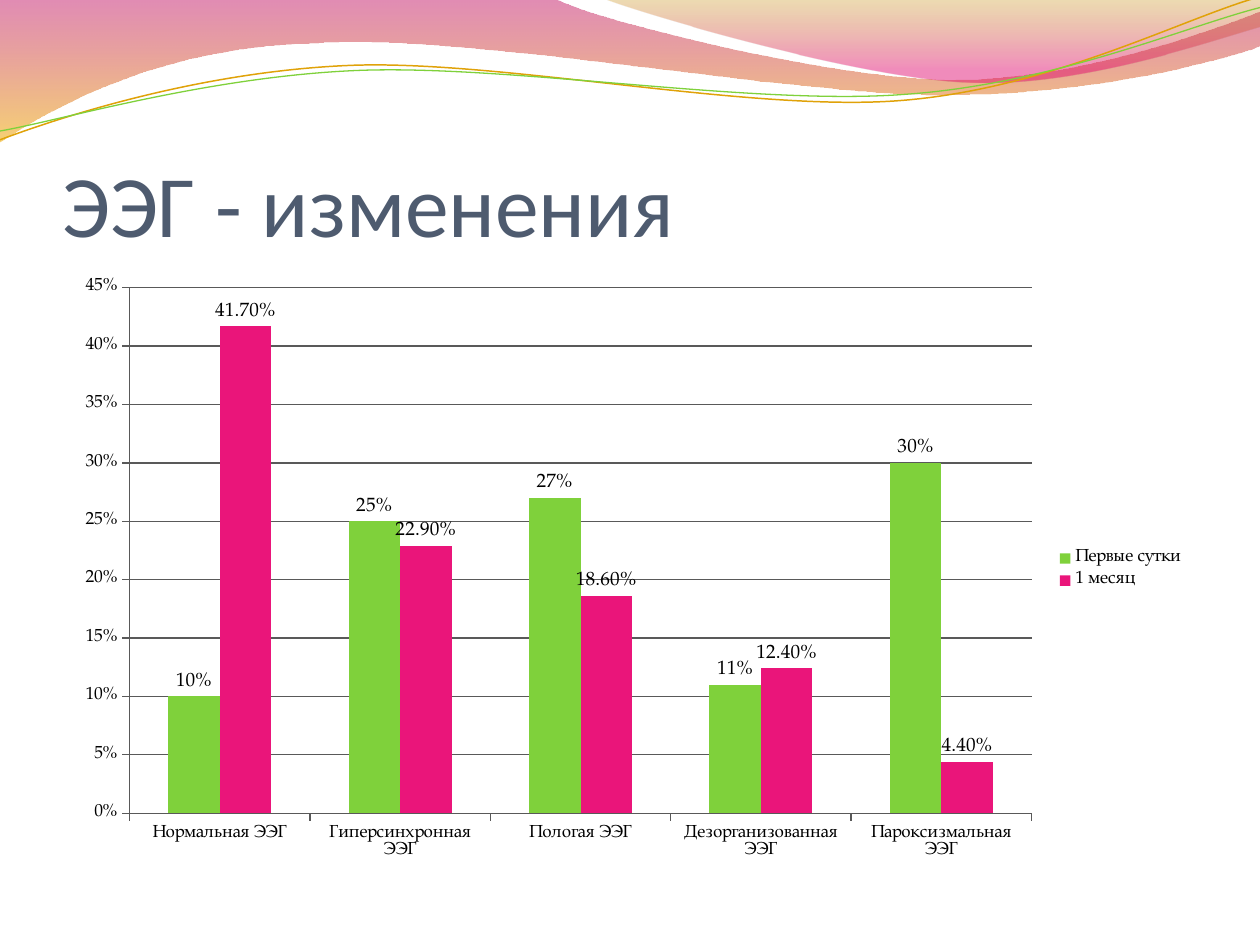
import pptx
import pptx.chart.data
import pptx.dml.color
import pptx.enum.chart
import pptx.enum.text
import pptx.oxml
import pptx.oxml.ns
import pptx.util
from pptx.util import Inches

theme = {
    "title_font": "Calibri", "title_size": 50, "title_color": "4E5B6F",
    "chart_font": "TeX Gyre Pagella", "chart_size": 10, "label_size": 11,
    "text": "000000", "axis": "595959",
    "first_day": "7FD13B", "one_month": "EA157A",
    "wave_gradient": [(0, "BD0059", 45), (1, "F0AB00", 55)],
    "corner_gradient": [(0, "C38B00", 30), (0.8, "E1006B", 45)],
    "gold_line": "E0A209", "green_line": "7FD13B",
}


def rgb(name):
    return pptx.dml.color.RGBColor.from_string(theme.get(name, name))


def draw_curve(shapes, start, segments, closed):
    builder = shapes.build_freeform(Inches(start[0]), Inches(start[1]), scale=1.0)
    for segment in segments:
        points = zip(segment[::2], segment[1::2])
        builder.add_line_segments([(Inches(x), Inches(y)) for x, y in points], close=False)
    if closed:
        builder.add_line_segments([], close=True)
    shape = builder.convert_to_shape()
    shape.shadow.inherit = False
    lines = iter(list(shape._element.iter(pptx.oxml.ns.qn("a:lnTo"))))
    for segment in segments:
        first = next(lines)
        if len(segment) == 6:
            first.tag = pptx.oxml.ns.qn("a:cubicBezTo")
            for line in (next(lines), next(lines)):
                first.append(line[0])
                line.getparent().remove(line)
    return shape


presentation = pptx.Presentation()
presentation.slide_width = Inches(10)
presentation.slide_height = Inches(7.5)
slide = presentation.slides.add_slide(presentation.slide_layouts[6])

bands = [
    ("wave_gradient", (0, 0), [
        (4.4, -0.01),
        (4.76, 0.17, 6.64, 0.63, 7.58, 0.63),
        (8.53, 0.63, 9.58, 0.26, 10, 0.09),
        (10.01, 0.36),
        (9.83, 0.44, 8.7, 0.76, 7.46, 0.75),
        (6.22, 0.75, 3.82, 0.28, 2.57, 0.34),
        (1.29, 0.36, 0.46, 0.83, -0.01, 1.13),
    ]),
    ("corner_gradient", (4.79, -0.01), [
        (5.09, 0.11, 6.82, 0.62, 7.69, 0.65),
        (8.56, 0.69, 9.61, 0.32, 10, 0.21),
        (10, 0),
    ]),
]
for gradient, start, segments in bands:
    band = draw_curve(slide.shapes, start, segments, True)
    band.line.fill.background()
    band.fill.gradient()
    band.fill.gradient_angle = 270
    for stop, (position, color, opacity) in zip(band.fill.gradient_stops, theme[gradient]):
        stop.position = position
        stop.color.rgb = rgb(color)
    colors = band._element.spPr.iter(pptx.oxml.ns.qn("a:srgbClr"))
    for color_element, (position, color, opacity) in zip(colors, theme[gradient]):
        alpha = pptx.oxml.parse_xml(
            f'<a:alpha {pptx.oxml.ns.nsdecls("a")} val="{opacity * 1000}"/>')
        color_element.append(alpha)

ribbons = [
    ("gold_line", 0.85, (0, 1.11), [
        (0.48, 0.93, 1.58, 0.57, 2.77, 0.52),
        (3.95, 0.47, 5.93, 0.89, 7.13, 0.8),
        (8.33, 0.71, 9.38, 0.15, 9.98, -0.02),
    ]),
    ("green_line", 0.75, (0, 1.04), [
        (0.47, 0.96, 1.64, 0.61, 2.83, 0.56),
        (4.03, 0.51, 5.97, 0.84, 7.17, 0.75),
        (8.36, 0.67, 9.41, 0.21, 10, 0.06),
    ]),
]
for color, width, start, segments in ribbons:
    ribbon = draw_curve(slide.shapes, start, segments, False)
    ribbon.fill.background()
    ribbon.line.color.rgb = rgb(color)
    ribbon.line.width = pptx.util.Pt(width)

title = slide.shapes.add_textbox(Inches(0.5), Inches(0.77), Inches(9), Inches(1.25))
text_frame = title.text_frame
text_frame.word_wrap = True
text_frame.vertical_anchor = pptx.enum.text.MSO_ANCHOR.BOTTOM
text_frame.margin_left = text_frame.margin_right = text_frame.margin_bottom = 0
text_frame.margin_top = Inches(0.05)
text_frame.text = "ЭЭГ - изменения"
title_font = text_frame.paragraphs[0].runs[0].font
title_font.name = theme["title_font"]
title_font.size = pptx.util.Pt(theme["title_size"])
title_font.color.rgb = rgb("title_color")

series_table = [
    ("Первые сутки", (0.1, 0.25, 0.27, 0.11, 0.3), "0%", "first_day"),
    ("1 месяц", (0.417, 0.229, 0.186, 0.124, 0.044), "0.00%", "one_month"),
]
chart_data = pptx.chart.data.CategoryChartData()
chart_data.categories = [
    "Нормальная ЭЭГ", "Гиперсинхронная ЭЭГ", "Пологая ЭЭГ",
    "Дезорганизованная ЭЭГ", "Пароксизмальная ЭЭГ",
]
for name, values, number_format, color in series_table:
    chart_data.add_series(name, values, number_format)
chart = slide.shapes.add_chart(
    pptx.enum.chart.XL_CHART_TYPE.COLUMN_CLUSTERED,
    Inches(0.5), Inches(2.12), Inches(9), Inches(4.8), chart_data).chart
chart.has_title = False
chart.font.name = theme["chart_font"]
chart.font.size = pptx.util.Pt(theme["chart_size"])
chart.font.color.rgb = rgb("text")
chart.has_legend = True
chart.legend.position = pptx.enum.chart.XL_LEGEND_POSITION.RIGHT
chart.legend.include_in_layout = False

plot = chart.plots[0]
plot.gap_width = 150
plot.overlap = 0
plot.vary_by_categories = False
for series, (name, values, number_format, color) in zip(plot.series, series_table):
    series.format.fill.solid()
    series.format.fill.fore_color.rgb = rgb(color)
    labels = series.data_labels
    labels.show_value = True
    labels.number_format = number_format
    labels.number_format_is_linked = False
    labels.position = pptx.enum.chart.XL_LABEL_POSITION.OUTSIDE_END
    labels.font.name = theme["chart_font"]
    labels.font.size = pptx.util.Pt(theme["label_size"])
    labels.font.color.rgb = rgb("text")

value_axis = chart.value_axis
value_axis.minimum_scale = 0
value_axis.maximum_scale = 0.45
value_axis.major_unit = 0.05
value_axis.has_major_gridlines = True
value_axis.tick_labels.number_format = "0%"
value_axis.tick_labels.number_format_is_linked = False
for axis in (chart.category_axis, value_axis):
    axis.major_tick_mark = pptx.enum.chart.XL_TICK_MARK.OUTSIDE
for line in (chart.category_axis.format.line, value_axis.format.line,
             value_axis.major_gridlines.format.line):
    line.color.rgb = rgb("axis")
    line.width = pptx.util.Pt(0.75)

presentation.save("out.pptx")
